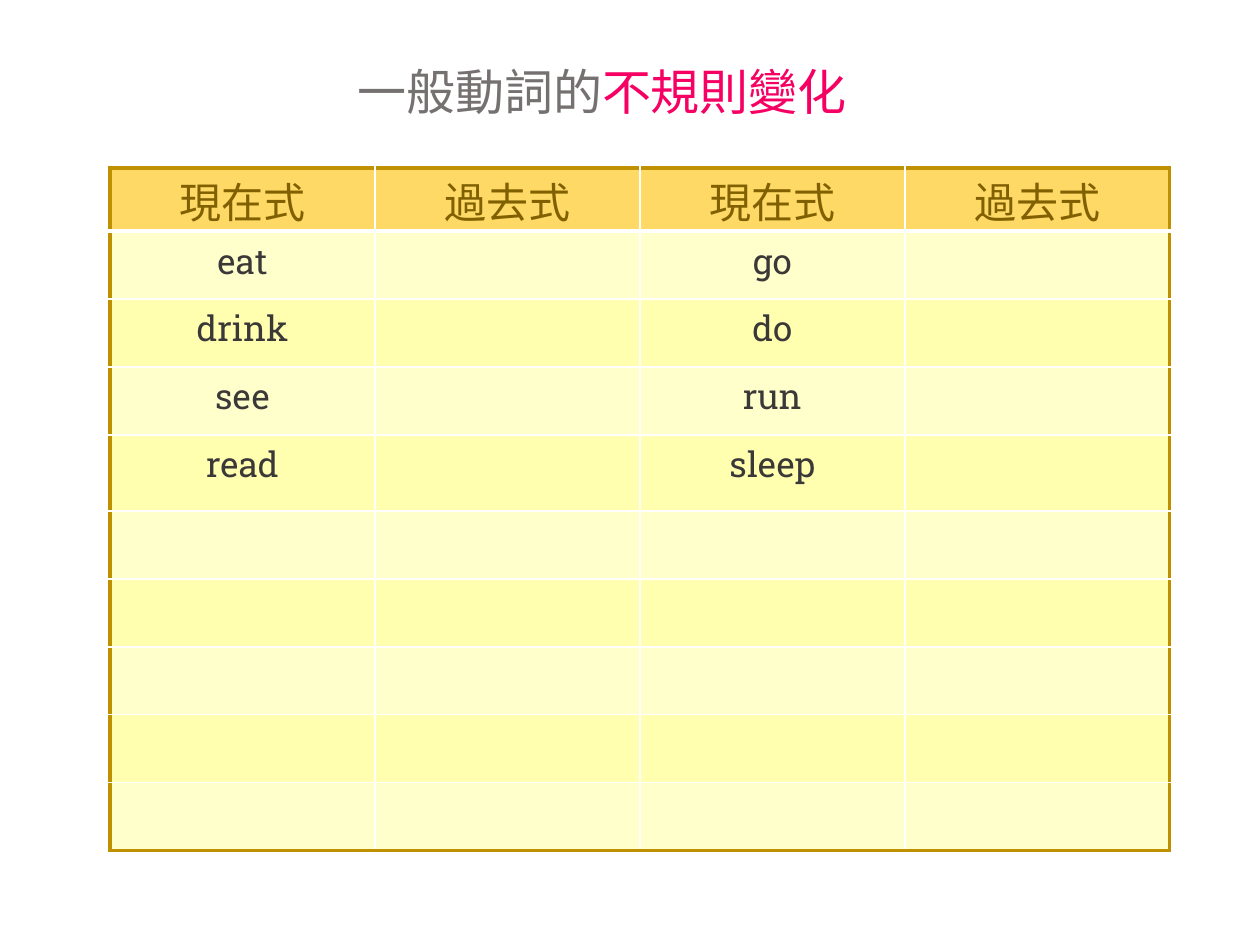
from dataclasses import dataclass

from pptx import Presentation
from pptx import util as u
from pptx.dml.color import RGBColor
from pptx.enum import text
from pptx.oxml.ns import qn
from lxml import etree

PX = 914400 // 126  # EMU in one px


@dataclass(frozen=True)
class Theme:
    title: str = "767171"
    accent: str = "F60064"
    head_text: str = "806000"
    body_text: str = "3B3838"
    head_fill: str = "FFD966"
    bands: tuple = ("FFFFCC", "FFFFAF")
    frame: str = "BF9000"
    grid: str = "FFFFFF"
    cjk: str = "Noto Sans CJK JP"
    latin: str = "Roboto Slab"
    title_size: int = 28
    head_size: int = 24
    body_size: int = 20


class Deck:
    def __init__(self, theme, width, height):
        self.theme = theme
        self.prs = Presentation()
        self.prs.slide_width = u.Emu(width * PX)
        self.prs.slide_height = u.Emu(height * PX)
        self.s = self.prs.slides.add_slide(self.prs.slide_layouts[6])

    def run(self, p, words, size, font, color):
        r = p.add_run()
        r.text = words
        r.font.size = u.Pt(size)
        r.font.name = font
        r.font.color.rgb = RGBColor.from_string(color)
        etree.SubElement(r.font._element, qn("a:ea"), typeface=font)

    def title(self, box, parts):
        t = self.theme
        sp = self.s.shapes.add_textbox(*(n * PX for n in box))
        tf = sp.text_frame
        tf.word_wrap = False
        tf.auto_size = text.MSO_AUTO_SIZE.SHAPE_TO_FIT_TEXT
        for words, color in parts:
            self.run(tf.paragraphs[0], words, t.title_size, t.cjk, color)

    def border(self, cell, edges):
        pr = cell._tc.get_or_add_tcPr()
        for i, (side, (color, width)) in enumerate(edges.items()):
            ln = etree.Element(qn(f"a:ln{side}"), w=str(u.Pt(width)))
            fill = etree.SubElement(ln, qn("a:solidFill"))
            etree.SubElement(fill, qn("a:srgbClr"), val=color)
            pr.insert(i, ln)

    def table(self, left, top, widths, heights, rows):
        t = self.theme
        box = (left, top, sum(widths), sum(heights))
        frame = self.s.shapes.add_table(
            len(heights), len(widths), *(n * PX for n in box))
        tbl = frame.table
        tbl.first_row = tbl.horz_banding = False
        for col, w in zip(tbl.columns, widths):
            col.width = u.Emu(w * PX)
        for row, h in zip(tbl.rows, heights):
            row.height = u.Emu(h * PX)

        outer, inner, rule = (t.frame, 2.25), (t.grid, 1), (t.grid, 3)
        last_row, last_col = len(heights) - 1, len(widths) - 1
        for i, row in enumerate(tbl.rows):
            for j, cell in enumerate(row.cells):
                head = i == 0
                cell.fill.solid()
                cell.fill.fore_color.rgb = RGBColor.from_string(
                    t.head_fill if head else t.bands[(i - 1) % 2])
                self.border(cell, {
                    "L": outer if j == 0 else inner,
                    "R": outer if j == last_col else inner,
                    "T": outer if head else rule if i == 1 else inner,
                    "B": rule if head else outer if i == last_row else inner,
                })
                if head:  # the header row is only as tall as its line
                    cell.margin_top, cell.margin_bottom = 2 * PX, 0
                p = cell.text_frame.paragraphs[0]
                p.alignment = text.PP_ALIGN.CENTER
                words = rows[i][j] if i < len(rows) else ""
                if words and head:
                    self.run(p, words, t.head_size, t.cjk, t.head_text)
                elif words:
                    self.run(p, words, t.body_size, t.latin, t.body_text)


def main():
    theme = Theme()
    deck = Deck(theme, 1260, 945)

    # Title in two colours
    deck.title((345, 55, 537, 72),
               [("一般動詞的", theme.title), ("不規則變化", theme.accent)])

    # Verb table: past forms and the lower rows are left to fill in
    verbs = [("eat", "go"), ("drink", "do"), ("see", "run"), ("read", "sleep")]
    rows = [("現在式", "過去式") * 2]
    rows += [(a, "", b, "") for a, b in verbs]
    heights = [63] + [68] * 3 + [76] + [68] * 5
    deck.table(110, 168, [265] * 4, heights, rows)

    deck.prs.save("out.pptx")


if __name__ == "__main__":
    main()
